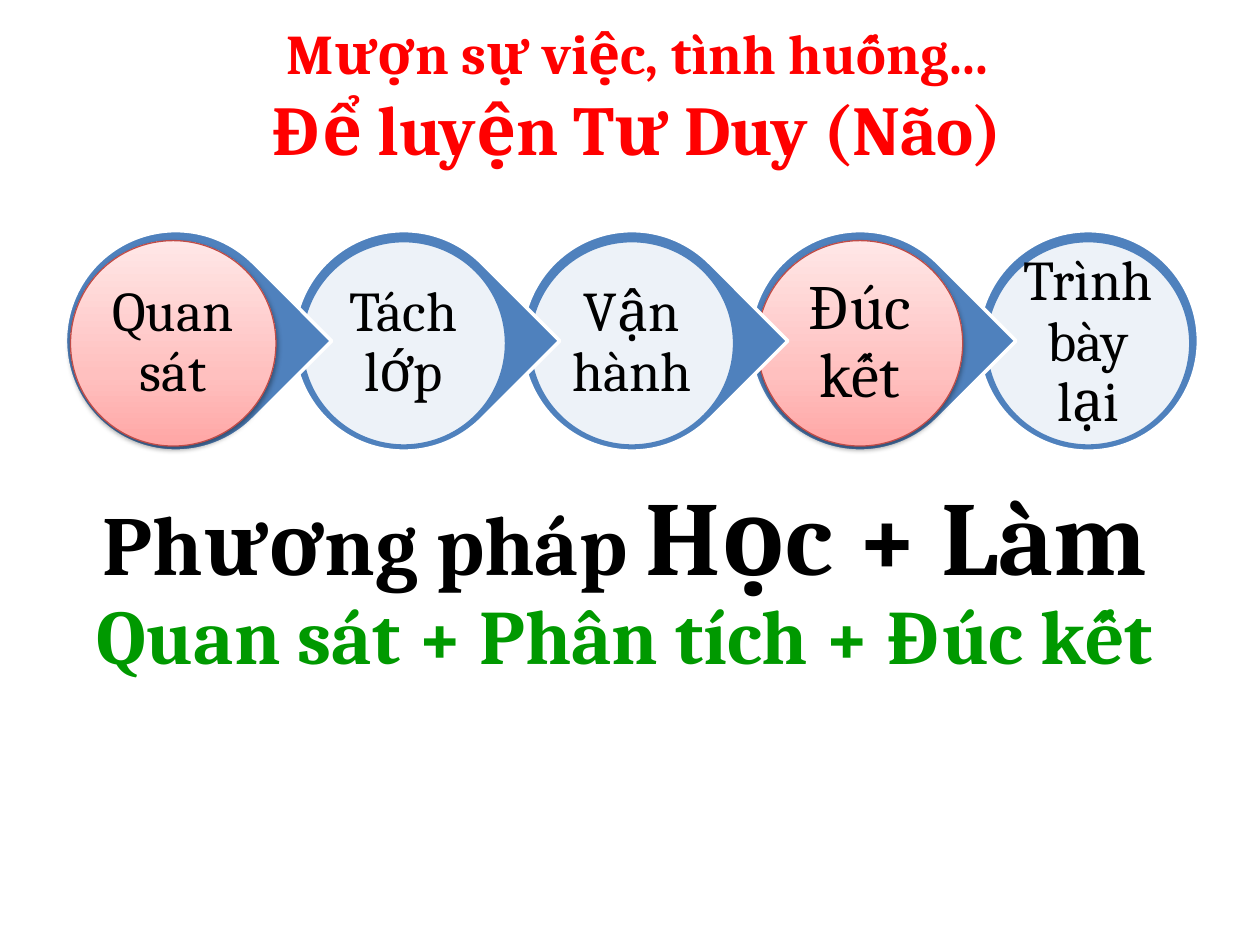
from copy import deepcopy
from lxml import etree
from pptx import Presentation
from pptx.dml.color import RGBColor
from pptx.enum.shapes import MSO_SHAPE
from pptx.enum.text import MSO_ANCHOR, PP_ALIGN
from pptx.oxml.ns import qn
from pptx.util import Pt

DROP, OVAL = MSO_SHAPE.TEAR, MSO_SHAPE.OVAL
MIDDLE, CENTER = MSO_ANCHOR.MIDDLE, PP_ALIGN.CENTER
FONT = "Cambria"
BLUE, RED, GREEN, BLACK, WHITE = "4F81BD", "FF0000", "009900", "000000", "FFFFFF"
PINKS = [(0, "FFA6A5"), (0.35, "FFC0BF"), (1, "FFE7E7")]

# Content: each paragraph is a list of lines, each line a list of (text, size, colour)
HEAD = [[[("Mượn sự việc, tình huống...", 32, RED)]],
        [[("Để luyện Tư Duy (Não)", 40, RED)]]]
TITLE = [[[("Phương pháp ", 48, BLACK), ("Học + Làm", 60, BLACK)],
          [("Quan sát + Phân tích + Đúc kết", 44, GREEN)]]]
# Steps: label, size, pink disc, shift of the disc inside its drop
STEPS = [("Quan sát", 32, True, 2.9), ("Tách lớp", 32, False, 4.3),
         ("Vận hành", 32, False, 4.3), ("Đúc kết", 36, True, 4.3),
         ("Trình bày lại", 32, False, 4.3)]
LEFT, STEP, TOP = 37.4, 130.35, 131.8
BIG, DISC, BOX = 126, 117.4, 84.2
DISC_TOP, INSET = 137.5, 16.6


def rgb(code):
    return RGBColor.from_string(code)


def add_text(box, paras, bold=True, space=None, pad=None):
    frame = box.text_frame
    frame.word_wrap = True
    frame.vertical_anchor = MIDDLE
    if pad is not None:
        frame.margin_left = frame.margin_right = Pt(pad)
        frame.margin_top = frame.margin_bottom = Pt(pad)
    for i, lines in enumerate(paras):
        para = frame.add_paragraph() if i else frame.paragraphs[0]
        para.alignment = CENTER
        if space:
            para.line_spacing = space
        for j, line in enumerate(lines):
            if j:
                para.add_line_break()
            for words, size, color in line:
                run = para.add_run()
                run.text = words
                font = run.font
                font.name, font.size, font.bold = FONT, Pt(size), bold
                font.color.rgb = rgb(color)


def add_box(x, y, w, h, *args, **keys):
    box = slide.shapes.add_textbox(Pt(x), Pt(y), Pt(w), Pt(h))
    add_text(box, *args, **keys)


def add_round(kind, x, y, size, fill, line, width):
    shape = slide.shapes.add_shape(kind, Pt(x), Pt(y), Pt(size), Pt(size))
    shape.shadow.inherit = False
    shape.fill.solid()
    shape.fill.fore_color.rgb = rgb(fill)
    shape.line.color.rgb = rgb(line)
    shape.line.width = Pt(width)
    return shape


def set_alpha(color, share):
    etree.SubElement(color, qn("a:alpha"), val=str(share * 1000))


def make_pink(shape):
    """Three-stop gradient, dark at the bottom, with a soft shadow."""
    props = shape._element.spPr
    shape.fill.gradient()
    shape.fill.gradient_angle = 90
    stops = props.find(".//" + qn("a:gsLst"))
    stops.append(deepcopy(stops[0]))
    for stop, (place, color) in zip(shape.fill.gradient_stops, PINKS):
        stop.position = place
        stop.color.rgb = rgb(color)
    shadow = etree.SubElement(
        props.find(qn("a:effectLst")), qn("a:outerShdw"), blurRad=str(Pt(3.1)),
        dist=str(Pt(1.6)), dir="5400000", rotWithShape="0")
    set_alpha(etree.SubElement(shadow, qn("a:srgbClr"), val=BLACK), 38)


deck = Presentation()
deck.slide_width, deck.slide_height = Pt(720), Pt(540)
slide = deck.slides.add_slide(deck.slide_layouts[6])

# Closing title
add_box(18, 264.2, 678.2, 138.2, TITLE, space=0.9)

# Chain of steps, last one at the back so that each tip lies over the next drop
for i, (label, size, pink, shift) in reversed(list(enumerate(STEPS))):
    x = LEFT + i * STEP
    last = i == len(STEPS) - 1
    drop = add_round(OVAL if last else DROP, x, TOP, BIG, BLUE, WHITE, 2)
    if not last:
        drop.adjustments[0] = 1
        drop.rotation = 45
    x += shift
    if pink:
        make_pink(add_round(OVAL, x, DISC_TOP, DISC, WHITE, "BF4C48", 0.75))
    else:
        disc = add_round(OVAL, x, DISC_TOP, DISC, WHITE, BLUE, 2)
        set_alpha(disc._element.spPr.find(qn("a:solidFill"))[0], 90)
    add_box(x + INSET, DISC_TOP + INSET, BOX, BOX, [[[(label, size, BLACK)]]],
            bold=False, space=0.9, pad=3)

# Heading
add_box(108, 5.8, 512.6, 95.8, HEAD)

deck.save("out.pptx")
